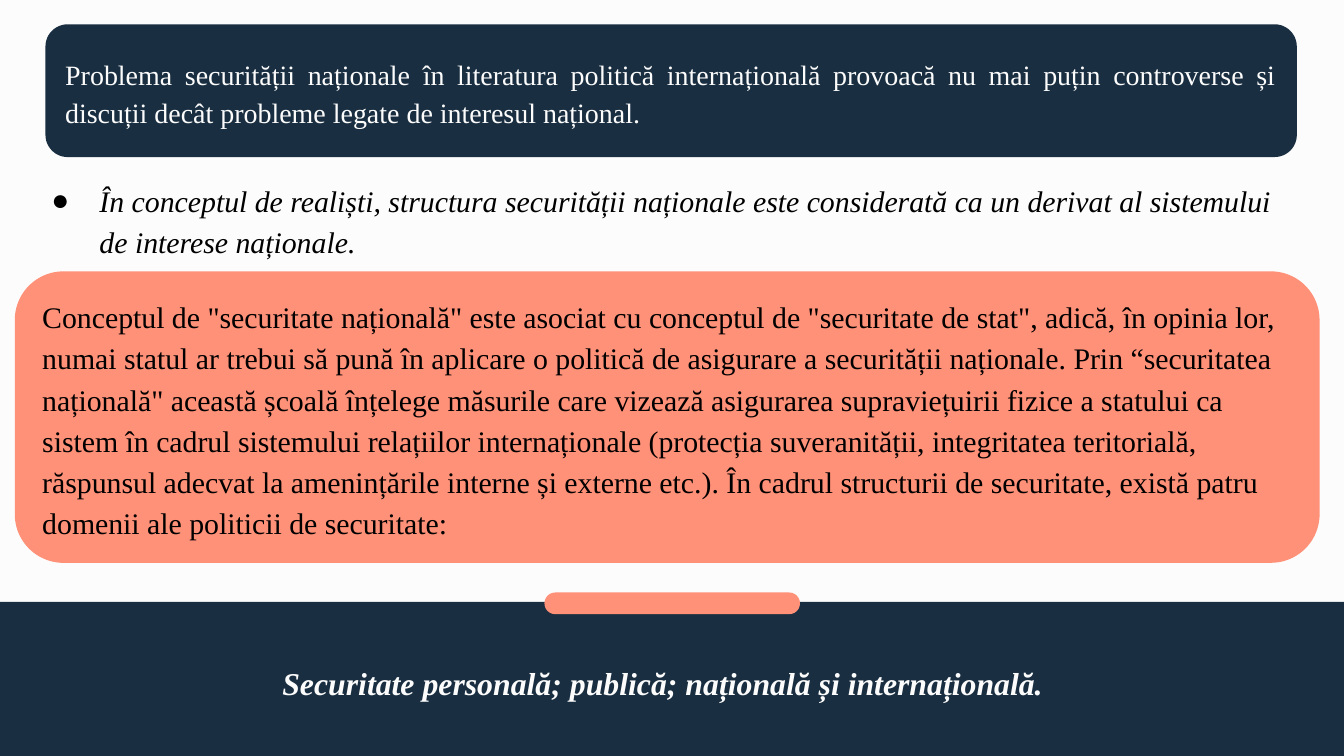
from dataclasses import dataclass

from lxml import etree
from pptx import Presentation
from pptx.dml.color import RGBColor
from pptx.enum.shapes import MSO_SHAPE
from pptx.enum.text import MSO_ANCHOR, MSO_AUTO_SIZE, PP_ALIGN
from pptx.oxml.ns import qn
from pptx.util import Cm, Pt

RECT, ROUNDED = MSO_SHAPE.RECTANGLE, MSO_SHAPE.ROUNDED_RECTANGLE
TOP, MIDDLE = MSO_ANCHOR.TOP, MSO_ANCHOR.MIDDLE
LEFT, CENTER, JUSTIFY = PP_ALIGN.LEFT, PP_ALIGN.CENTER, PP_ALIGN.JUSTIFY
FIXED, GROW = MSO_AUTO_SIZE.NONE, MSO_AUTO_SIZE.SHAPE_TO_FIT_TEXT

WIDTH, HEIGHT = 25.4, 14.29
BAND_TOP = 11.38

INTRO = (
    "Problema securității naționale în literatura politică internațională provoacă nu mai "
    "puțin controverse și discuții decât probleme legate de interesul național."
)
REALISTS = (
    "În conceptul de realiști, structura securității naționale este considerată ca un "
    "derivat al sistemului de interese naționale."
)
CONCEPT = (
    'Conceptul de "securitate națională" este asociat cu conceptul de "securitate de stat", '
    "adică, în opinia lor, numai statul ar trebui să pună în aplicare o politică de asigurare "
    'a securității naționale. Prin “securitatea națională" această școală înțelege măsurile '
    "care vizează asigurarea supraviețuirii fizice a statului ca sistem în cadrul sistemului "
    "relațiilor internaționale (protecția suveranității, integritatea teritorială, răspunsul "
    "adecvat la amenințările interne și externe etc.). În cadrul structurii de securitate, "
    "există patru domenii ale politicii de securitate:"
)
DOMAINS = "Securitate personală; publică; națională și internațională. "


@dataclass(frozen=True)
class Theme:
    """Colours, type sizes and spacing of the slide."""

    paper: RGBColor = RGBColor(0xFC, 0xFC, 0xFC)
    navy: RGBColor = RGBColor(0x19, 0x2E, 0x40)
    coral: RGBColor = RGBColor(0xFF, 0x91, 0x79)
    ink: RGBColor = RGBColor(0, 0, 0)
    font: str = "Times New Roman"
    intro: int = 15
    body: int = 16
    closing: int = 17
    spacing: float = 1.15
    inset: float = 0.25


def write(sp, text, theme, *, size, color, align=LEFT, anchor=TOP, fit=FIXED,
          bold=False, italic=False, bullet=None):
    """Fill a shape with one formatted paragraph."""
    tf = sp.text_frame
    tf.word_wrap = True
    tf.auto_size = fit
    tf.vertical_anchor = anchor
    tf.margin_left = tf.margin_right = tf.margin_top = tf.margin_bottom = Cm(theme.inset)
    p = tf.paragraphs[0]
    if bullet:
        pPr = p._p.get_or_add_pPr()
        pPr.set("marL", str(Cm(1.27)))
        pPr.set("indent", str(Cm(-0.91)))
        clr = etree.SubElement(pPr, qn("a:buClr"))
        etree.SubElement(clr, qn("a:srgbClr"), val=str(color))
        etree.SubElement(pPr, qn("a:buFont"), typeface=theme.font)
        etree.SubElement(pPr, qn("a:buChar"), char=bullet)
    p.alignment = align
    p.line_spacing = theme.spacing
    p.space_before = Pt(0)
    r = p.add_run()
    r.text = text
    font = r.font
    font.name, font.size, font.color.rgb = theme.font, Pt(size), color
    font.bold, font.italic = bold, italic


class SlideBuilder:
    """Holds the theme and the slide being built."""

    def __init__(self, prs, theme):
        """Add a slide with a plain background and only its body placeholder."""
        self.theme = theme
        self.s = prs.slides.add_slide(prs.slide_layouts[1])
        fill = self.s.background.fill
        fill.solid()
        fill.fore_color.rgb = theme.paper
        title = self.s.shapes.title._element
        title.getparent().remove(title)

    def panel(self, box, color, kind=ROUNDED, corner=0.167):
        """Draw a filled shape without outline."""
        sp = self.s.shapes.add_shape(kind, *map(Cm, box))
        if kind == ROUNDED:
            sp.adjustments[0] = corner
        sp.shadow.inherit = False
        sp.fill.solid()
        sp.fill.fore_color.rgb = color
        sp.line.fill.background()
        return sp

    def card(self, box, text, fill, **fmt):
        """Draw a rounded panel with vertically centred text."""
        write(self.panel(box, fill), text, self.theme, anchor=MIDDLE, **fmt)

    def bullets(self, box, text, **fmt):
        """Place the list in the body placeholder."""
        sp = self.s.placeholders[1]
        sp.left, sp.top, sp.width, sp.height = map(Cm, box)
        write(sp, text, self.theme, fit=GROW, bullet="●", **fmt)

    def label(self, box, text, **fmt):
        """Place a free text box."""
        sp = self.s.shapes.add_textbox(*map(Cm, box))
        write(sp, text, self.theme, fit=GROW, **fmt)


def main():
    """Build and save the slide."""
    prs = Presentation()
    prs.slide_width, prs.slide_height = Cm(WIDTH), Cm(HEIGHT)
    theme = Theme()
    s = SlideBuilder(prs, theme)
    s.panel((0, BAND_TOP, WIDTH, HEIGHT - BAND_TOP), theme.navy, kind=RECT)
    s.panel((10.29, 11.2, 4.83, 0.41), theme.coral, corner=0.5)
    s.card((0.86, 0.46, 23.65, 2.51), INTRO, theme.navy,
           size=theme.intro, color=theme.paper, align=JUSTIFY)
    s.bullets((0.36, 3.1, 24.51, 1.98), REALISTS,
              size=theme.body, color=theme.ink, italic=True)
    s.card((0.28, 5.13, 24.66, 5.51), CONCEPT, theme.coral,
           size=theme.body, color=theme.ink)
    s.label((4.34, 12.19, 16.54, 1.24), DOMAINS, size=theme.closing,
            color=theme.paper, align=CENTER, bold=True, italic=True)
    prs.save("out.pptx")


if __name__ == "__main__":
    main()
